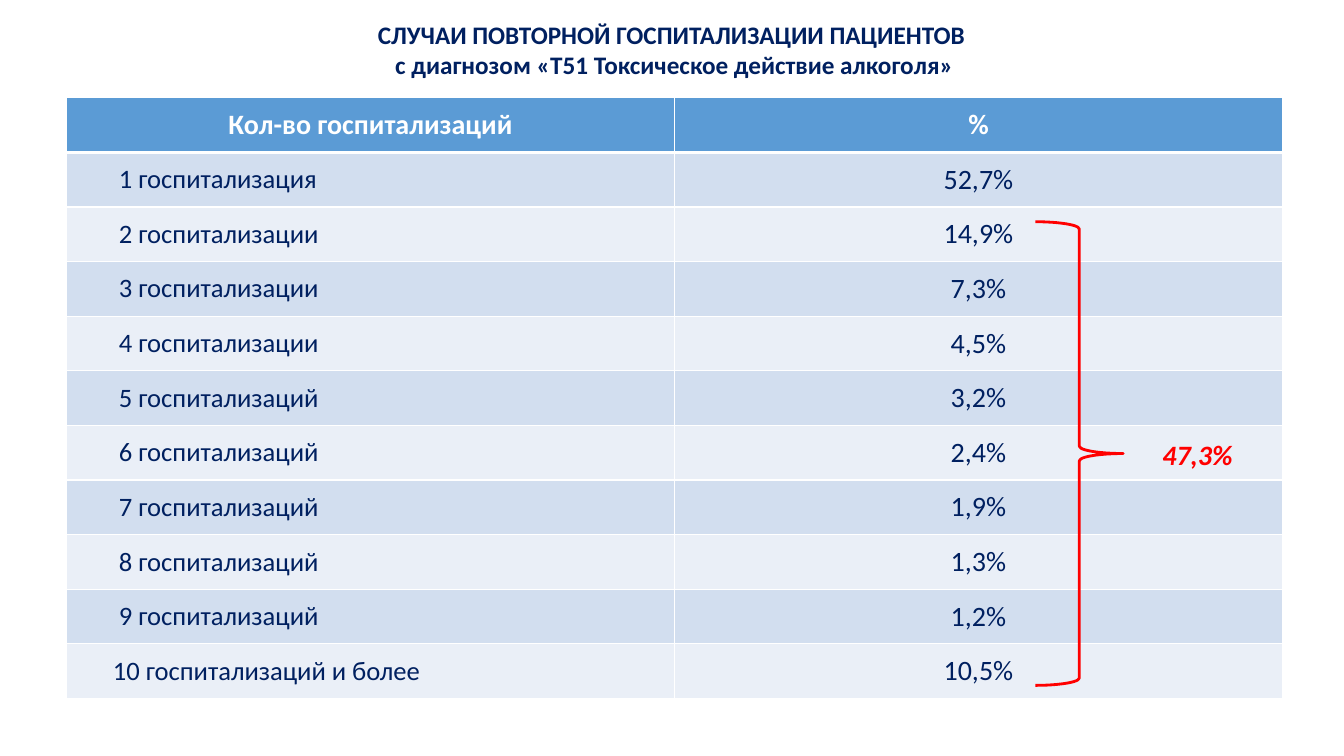
from dataclasses import dataclass

from pptx import Presentation
from pptx.dml.color import RGBColor
from pptx.enum.shapes import MSO_SHAPE as Shape
from pptx.enum.text import MSO_ANCHOR as Anchor, MSO_AUTO_SIZE as AutoSize, PP_ALIGN as Align
from pptx.oxml.ns import qn
from pptx.util import Pt
from lxml.etree import SubElement

PX = 9144  # one px is 1/100 inch


@dataclass(frozen=True)
class Theme:
    font: str = "Calibri"
    navy: str = "002060"
    white: str = "FFFFFF"
    red: str = "FF0000"
    header: str = "5B9BD5"
    bands: tuple = ("D2DEEF", "EAEFF7")
    title_size: int = 18
    label_size: int = 19
    value_size: int = 20
    grid_line: int = 1
    header_line: int = 3
    brace_line: int = 2


THEME = Theme()

TITLE = ("СЛУЧАИ ПОВТОРНОЙ ГОСПИТАЛИЗАЦИИ ПАЦИЕНТОВ ",
         "с диагнозом «T51 Токсическое действие алкоголя»")
HEADERS = ("Кол-во госпитализаций", "%")
CASES = (
    ("1 госпитализация", "52,7%"),
    ("2 госпитализации", "14,9%"),
    ("3 госпитализации", "7,3%"),
    ("4 госпитализации", "4,5%"),
    ("5 госпитализаций", "3,2%"),
    ("6 госпитализаций", "2,4%"),
    ("7 госпитализаций", "1,9%"),
    ("8 госпитализаций", "1,3%"),
    ("9 госпитализаций", "1,2%"),
    ("10 госпитализаций и более", "10,5%"),
)
REPEAT_TOTAL = "47,3%"


def emu(*lengths):
    return [length * PX for length in lengths]


def add_run(paragraph, text, size, color, bold=False, italic=False, align=Align.LEFT):
    paragraph.alignment = align
    run = paragraph.add_run()
    run.text = text
    font = run.font
    font.name, font.size = THEME.font, Pt(size)
    font.bold, font.italic = bold, italic
    font.color.rgb = RGBColor.from_string(color)


def add_textbox(slide, box):
    frame = slide.shapes.add_textbox(*emu(*box)).text_frame
    frame.word_wrap = True
    frame.auto_size = AutoSize.SHAPE_TO_FIT_TEXT
    return frame


def style_cell(cell, fill, bottom_line):
    # Borders come before the fill in the cell properties
    properties = cell._tc.get_or_add_tcPr()
    for side in "LRTB":
        width = bottom_line if side == "B" else THEME.grid_line
        border = SubElement(properties, qn(f"a:ln{side}"), w=str(Pt(width)))
        solid = SubElement(border, qn("a:solidFill"))
        SubElement(solid, qn("a:srgbClr"), val=THEME.white)
    cell.fill.solid()
    cell.fill.fore_color.rgb = RGBColor.from_string(fill)
    cell.vertical_anchor = Anchor.MIDDLE


def add_title(slide, box):
    frame = add_textbox(slide, box)
    for index, line in enumerate(TITLE):
        paragraph = frame.add_paragraph() if index else frame.paragraphs[0]
        add_run(paragraph, line, THEME.title_size, THEME.navy, bold=True, align=Align.CENTER)


def add_cases_table(slide, box):
    row_count = len(CASES) + 1
    table = slide.shapes.add_table(row_count, len(HEADERS), *emu(*box)).table
    for row in table.rows:
        row.height = box[3] * PX // row_count

    # Header row
    for column, heading in enumerate(HEADERS):
        cell = table.cell(0, column)
        style_cell(cell, THEME.header, THEME.header_line)
        add_run(cell.text_frame.paragraphs[0], heading, THEME.value_size, THEME.white,
                bold=True, align=Align.CENTER)

    # Banded rows; two-digit counts start a little further left
    for index, (label, share) in enumerate(CASES):
        label_cell, share_cell = table.cell(index + 1, 0), table.cell(index + 1, 1)
        for cell in (label_cell, share_cell):
            style_cell(cell, THEME.bands[index % 2],
                       THEME.grid_line)
        label_cell.margin_left = (46 if label.startswith("10") else 52) * PX
        add_run(label_cell.text_frame.paragraphs[0], label, THEME.label_size, THEME.navy)
        add_run(share_cell.text_frame.paragraphs[0], share, THEME.value_size, THEME.navy,
                align=Align.CENTER)


def add_repeat_total(slide, box):
    left, top, width, height = box

    # Brace over the repeat hospitalizations
    brace = slide.shapes.add_shape(Shape.RIGHT_BRACE, *emu(left, top, 87, height))
    brace.shadow.inherit = False
    brace.fill.background()
    brace.line.color.rgb = RGBColor.from_string(THEME.red)
    brace.line.width = Pt(THEME.brace_line)

    # Their joint share
    frame = add_textbox(slide, (left + width - 101, top + 209, 101, 44))
    add_run(frame.paragraphs[0], REPEAT_TOTAL, THEME.value_size, THEME.red,
            bold=True, italic=True)


def main():
    deck = Presentation()
    deck.slide_width, deck.slide_height = emu(1333, 750)
    slide = deck.slides.add_slide(deck.slide_layouts[6])
    add_title(slide, (66, 14, 1206, 71))
    add_cases_table(slide, (66, 97, 1206, 596))
    add_repeat_total(slide, (1027, 220, 217, 460))
    deck.save("out.pptx")


if __name__ == "__main__":
    main()
